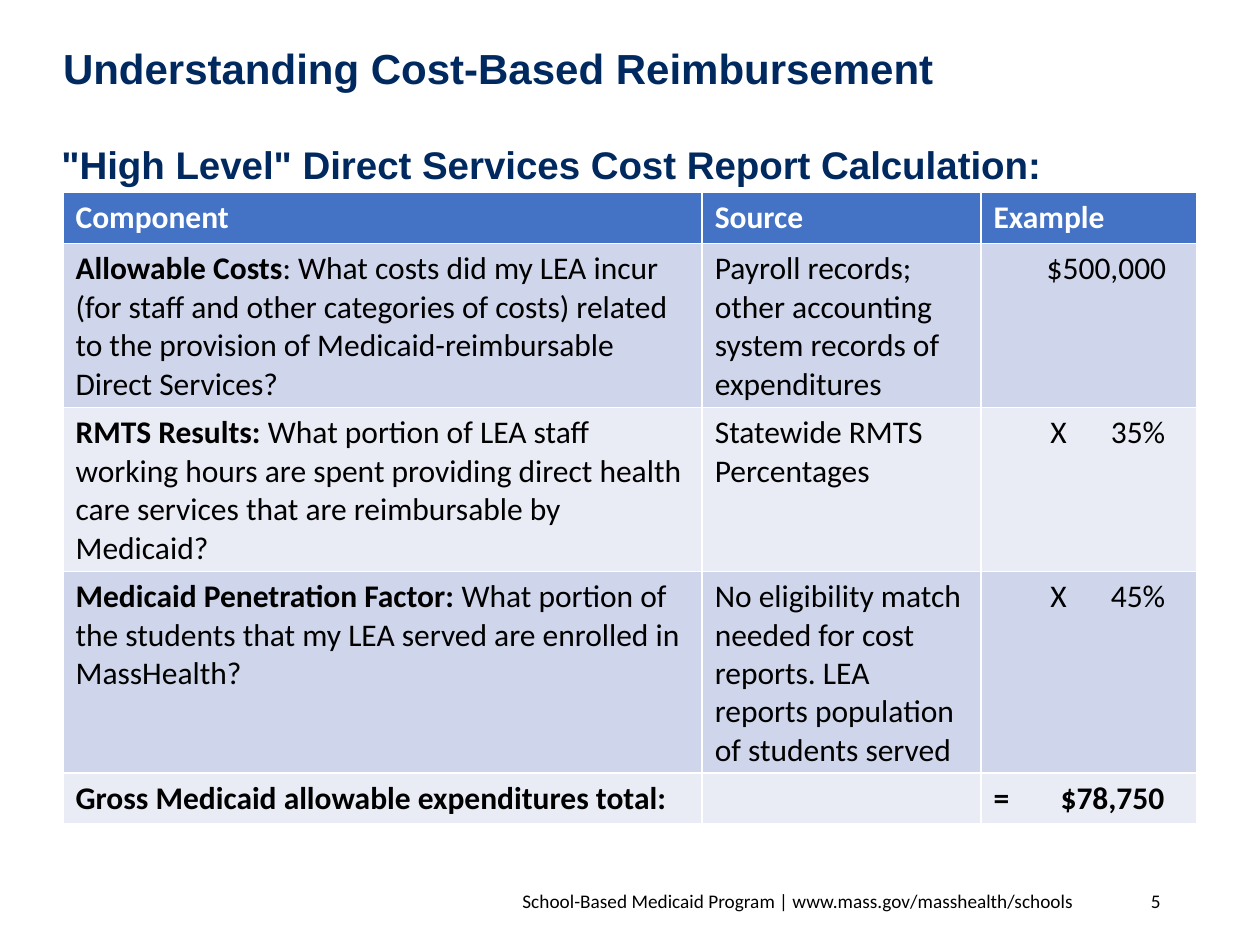
"""Build the slide that explains the cost report calculation."""
from dataclasses import dataclass

from lxml import etree
from pptx import Presentation
from pptx.dml.color import RGBColor
from pptx.enum.text import MSO_ANCHOR, MSO_AUTO_SIZE, PP_ALIGN
from pptx.oxml.ns import qn
from pptx.util import Pt

LEFT, CENTER, RIGHT = PP_ALIGN.LEFT, PP_ALIGN.CENTER, PP_ALIGN.RIGHT
TOP, MIDDLE = MSO_ANCHOR.TOP, MSO_ANCHOR.MIDDLE
NO_AUTOFIT = MSO_AUTO_SIZE.NONE


@dataclass(frozen=True)
class Theme:
    navy: str = "002960"
    black: str = "000000"
    white: str = "FFFFFF"
    header_fill: str = "4472C4"
    bands: tuple[str, str] = ("CFD5EA", "E9EBF5")
    heading_font: str = "Arial"
    body_font: str = "Calibri"
    title_size: float = 24
    subtitle_size: float = 22
    table_size: float = 18
    footer_size: float = 11


@dataclass(frozen=True)
class Box:
    left: float
    top: float
    width: float
    height: float

    def lengths(self) -> tuple[Pt, Pt, Pt, Pt]:
        return Pt(self.left), Pt(self.top), Pt(self.width), Pt(self.height)


@dataclass(frozen=True)
class CostStep:
    label: str
    question: str
    source: str
    example: str
    height: float
    tabs: tuple[float, ...] = ()
    align: PP_ALIGN = LEFT
    bold_example: bool = False


THEME = Theme()
TITLE_BOX = Box(36, 24, 666, 29)
SUBTITLE_BOX = Box(28, 77, 648, 42)
TABLE_BOX = Box(36, 110, 648, 361)
FOOTER_BOX = Box(192, 500.4, 528, 29)
NUMBER_BOX = Box(508.3, 500.4, 162, 29)
COLUMN_WIDTHS = (365.3, 159.3, 123.4)
HEADERS = ("Component", "Source", "Example")
HEADER_HEIGHT = 29.2
EXAMPLE_MARGIN = 17.5
FACTOR_TABS = (32.5, 67)

STEPS = (
    CostStep("Allowable Costs",
             ": What costs did my LEA incur (for staff and other categories of costs) "
             "related to the provision of Medicaid-reimbursable Direct Services?",
             "Payroll records; other accounting system records of expenditures",
             "$500,000", 93.6, align=RIGHT),
    CostStep("RMTS Results: ",
             "What portion of LEA staff working hours are spent providing direct "
             "health care services that are reimbursable by Medicaid?",
             "Statewide RMTS Percentages", "\tX\t35%", 93.6, FACTOR_TABS),
    CostStep("Medicaid Penetration Factor: ",
             "What portion of the students that my LEA served are enrolled in MassHealth?",
             "No eligibility match needed for cost reports. LEA reports population "
             "of students served", "\tX\t45%", 115, FACTOR_TABS),
    CostStep("Gross Medicaid allowable expenditures total:", "", "", "=\t$78,750",
             HEADER_HEIGHT, (38.3,), bold_example=True),
)


def write(paragraph, text: str, *, size: float, color: str, font: str,
          bold: bool = False, align: PP_ALIGN = LEFT) -> None:
    """Append one formatted run to a paragraph."""
    paragraph.alignment = align
    run = paragraph.add_run()
    run.text = text
    run.font.name, run.font.size, run.font.bold = font, Pt(size), bold
    run.font.color.rgb = RGBColor.from_string(color)


def set_tabs(paragraph, stops: tuple[float, ...]) -> None:
    """Give a paragraph left tab stops."""
    tab_list = etree.SubElement(paragraph._p.get_or_add_pPr(), qn("a:tabLst"))
    for stop in stops:
        etree.SubElement(tab_list, qn("a:tab"), pos=str(Pt(stop)), algn="l")


def add_text(slide, box: Box, text: str, *, anchor: MSO_ANCHOR = TOP,
             space_after: float = 0, **style) -> None:
    """Add a wrapping text box with one paragraph."""
    frame = slide.shapes.add_textbox(*box.lengths()).text_frame
    frame.word_wrap = True
    frame.vertical_anchor = anchor
    paragraph = frame.paragraphs[0]
    paragraph.space_after = Pt(space_after)
    write(paragraph, text, **style)


def add_title(slide, text: str) -> None:
    """Place and format the title placeholder."""
    title = slide.shapes.title
    title.left, title.top, title.width, title.height = TITLE_BOX.lengths()
    frame = title.text_frame
    frame.auto_size = NO_AUTOFIT
    frame.vertical_anchor = TOP
    frame.margin_left = frame.margin_top = frame.margin_right = frame.margin_bottom = 0
    write(frame.paragraphs[0], text, size=THEME.title_size, color=THEME.navy,
          font=THEME.heading_font, bold=True)


def fill_cell(cell, fill: str, runs: tuple[tuple[str, bool], ...],
              color: str = THEME.black, align: PP_ALIGN = LEFT,
              tabs: tuple[float, ...] = ()) -> None:
    """Fill a table cell and write its text and bold pairs."""
    cell.fill.solid()
    cell.fill.fore_color.rgb = RGBColor.from_string(fill)
    paragraph = cell.text_frame.paragraphs[0]
    for text, bold in runs:
        if text:
            write(paragraph, text, size=THEME.table_size, color=color,
                  font=THEME.body_font, bold=bold, align=align)
    if tabs:
        set_tabs(paragraph, tabs)


def add_cost_table(slide) -> None:
    """Add the table of calculation steps."""
    table = slide.shapes.add_table(len(STEPS) + 1, len(HEADERS),
                                   *TABLE_BOX.lengths()).table
    for column, width in zip(table.columns, COLUMN_WIDTHS):
        column.width = Pt(width)
    table.rows[0].height = Pt(HEADER_HEIGHT)
    for cell, header in zip(table.rows[0].cells, HEADERS):
        fill_cell(cell, THEME.header_fill, ((header, True),), THEME.white)
    for index, step in enumerate(STEPS):
        row = table.rows[index + 1]
        row.height = Pt(step.height)
        fill = THEME.bands[index % len(THEME.bands)]
        component, source, example = row.cells
        fill_cell(component, fill, ((step.label, True), (step.question, False)))
        fill_cell(source, fill, ((step.source, False),))
        fill_cell(example, fill, ((step.example, step.bold_example),),
                  align=step.align, tabs=step.tabs)
        example.margin_right = Pt(EXAMPLE_MARGIN)


def main() -> None:
    """Build and save the presentation."""
    presentation = Presentation()
    presentation.slide_width, presentation.slide_height = Pt(720), Pt(540)
    slide = presentation.slides.add_slide(presentation.slide_layouts[5])
    footer_style = dict(anchor=MIDDLE, size=THEME.footer_size, color=THEME.black,
                        font=THEME.body_font)
    add_text(slide, FOOTER_BOX,
             "School-Based Medicaid Program | www.mass.gov/masshealth/schools",
             align=CENTER, **footer_style)
    add_text(slide, NUMBER_BOX, "5", align=RIGHT, **footer_style)
    add_title(slide, "Understanding Cost-Based Reimbursement")
    add_text(slide, SUBTITLE_BOX,
             '"High Level" Direct Services Cost Report Calculation:', space_after=6,
             size=THEME.subtitle_size, color=THEME.navy, font=THEME.heading_font,
             bold=True)
    add_cost_table(slide)
    presentation.save("out.pptx")


if __name__ == "__main__":
    main()
